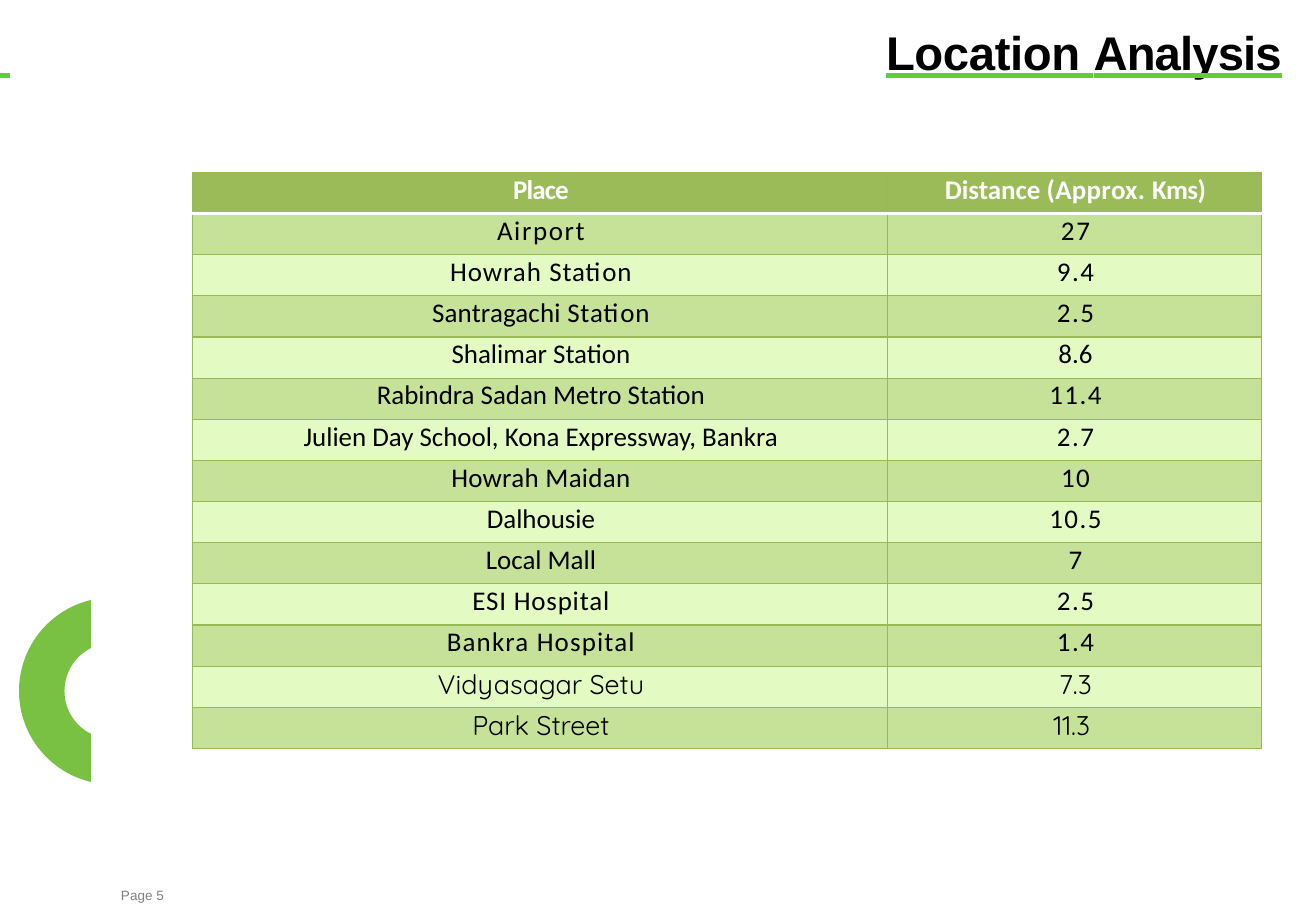
import math
from lxml import etree
from pptx import Presentation
from pptx.dml.color import RGBColor
from pptx.enum.text import MSO_ANCHOR, MSO_AUTO_SIZE, MSO_UNDERLINE, PP_ALIGN
from pptx.oxml.ns import qn
from pptx.util import Pt

LEFT, MID = PP_ALIGN.LEFT, PP_ALIGN.CENTER
TOP = MSO_ANCHOR.TOP
FIXED = MSO_AUTO_SIZE.NONE
HEAVY = MSO_UNDERLINE.HEAVY_LINE
UNIT = 914400 / 121.5

# Content: text and letter spacing in points
TITLE = [(" \t", 1.1), ("Location", -0.2), (" ", 0.1), ("Analysis", -0.5)]
FOOT = [("Page 5", 0)]
HEAD = [[("Place", -0.5)], [("Distance ", 0), ("(Approx. ", 0.2), ("Kms)", -0.3)]]
PLACES = [
    ([("Airport", 1)], "27", 1),
    ([("Howrah ", 0.6), ("Station", 0.5)], "9.4", 0.9),
    ([("Santragachi ", 0.1), ("Station", 0.5)], "2.5", 0.9),
    ([("Shalimar Station", 0)], "8.6", 0),
    ([("Rabindra Sadan Metro Station", 0)], "11.4", 0.9),
    ([("Julien Day School, Kona Expressway, Bankra", 0)], "2.7", 0.9),
    ([("Howrah Maidan", 0.2)], "10", 0.9),
    ([("Dalhousie", 0)], "10.5", 0.9),
    ([("Local Mall", 0)], "7", 0.9),
    ([("ESI Hospital", 0.5)], "2.5", 0.9),
    ([("Bankra Hospital", 0.7)], "1.4", 0.9),
    ([("Vidyasagar Setu", 0)], "7.3", 0),
    ([("Park Street", 0)], "11.3 ", 0),
]
SOFT = ("Vidyasagar Setu", "Park Street")
GREEN, EDGE, DARK, LIGHT = "9BBB59", "98B955", "C6E298", "E3FBC3"
COLS = (695, 374)


def px(n):
    return round(n * UNIT)


def hue(code):
    return RGBColor.from_string(code)


def add_fill(parent, code):
    fill = etree.SubElement(parent, qn("a:solidFill"))
    etree.SubElement(fill, qn("a:srgbClr")).set("val", code)


def write(frame, runs, size=16, font="Calibri", color="000000", bold=False,
          align=LEFT, line=None, tabs=()):
    para = frame.paragraphs[0]
    if tabs:
        stops = etree.SubElement(para._p.get_or_add_pPr(), qn("a:tabLst"))
        for stop in tabs:
            tab = etree.SubElement(stops, qn("a:tab"))
            tab.set("pos", str(px(stop)))
            tab.set("algn", "l")
    para.alignment = align
    for text, gap in runs:
        run = para.add_run()
        run.text = text
        face = run.font
        face.size, face.name, face.bold = Pt(size), font, bold
        face.color.rgb = hue(color)
        props = run._r.get_or_add_rPr()
        props.set("spc", str(round(gap * 100)))
        if line:
            face.underline = HEAVY
            mark = etree.Element(qn("a:uFill"))
            add_fill(mark, line)
            props.find(qn("a:latin")).addprevious(mark)


def place(shape, x, y, w, h, top=0):
    shape.left, shape.top, shape.width, shape.height = map(px, (x, y, w, h))
    frame = shape.text_frame
    frame.margin_left = frame.margin_right = frame.margin_bottom = 0
    frame.margin_top = px(top)
    frame.vertical_anchor, frame.auto_size = TOP, FIXED
    frame.word_wrap = True
    return frame


def style(cell, fill, edges):
    cell.margin_left = px(2)
    cell.margin_right = cell.margin_bottom = 0
    cell.margin_top = px(1)
    cell.vertical_anchor = TOP
    props = cell._tc.get_or_add_tcPr()
    for side in "LRTB":
        code, wide = edges.get(side, (EDGE, 0.75))
        line = etree.SubElement(props, qn("a:ln" + side))
        line.set("w", str(Pt(wide)))
        add_fill(line, code)
    cell.fill.solid()
    cell.fill.fore_color.rgb = hue(fill)


def add_ring(slide, x, y, outer, inner, cut):
    # Part of a ring left of a straight cut
    pts = []
    for rad, way in ((outer, 1), (inner, -1)):
        half = math.acos((x - cut) / rad)
        for i in range(-20, 21):
            turn = half * i / 20 * way
            pts.append((px(x - rad * math.cos(turn)), px(y + rad * math.sin(turn))))
    form = slide.shapes.build_freeform(*pts[0], scale=1.0)
    form.add_line_segments(pts[1:], close=True)
    ring = form.convert_to_shape()
    ring.shadow.inherit = False
    ring.fill.solid()
    ring.fill.fore_color.rgb = hue("79C142")
    ring.line.fill.background()


def add_grid(slide):
    count = len(PLACES) + 1
    grid = slide.shapes.add_table(count, 2, px(192.5), px(172.5),
                                  px(sum(COLS)), px(576)).table
    for col, wide in zip(grid.columns, COLS):
        col.width = px(wide)
    for row in grid.rows:
        row.height = px(576 / count)
    rule = ("FFFFFF", 2)
    for c, runs in enumerate(HEAD):
        cell = grid.cell(0, c)
        style(cell, GREEN, {"B": rule})
        write(cell.text_frame, runs, color="FFFFFF", bold=True, align=MID)
    for r, (name, far, gap) in enumerate(PLACES, 1):
        font = "Quicksand" if name[0][0] in SOFT else "Calibri"
        for c, runs in enumerate((name, [(far, gap)])):
            cell = grid.cell(r, c)
            style(cell, DARK if r % 2 else LIGHT, {"T": rule} if r == 1 else {})
            write(cell.text_frame, runs, font=font, align=MID)


def main():
    deck = Presentation()
    deck.slide_width, deck.slide_height = px(1316), px(911)
    slide = deck.slides.add_slide(deck.slide_layouts[5])

    # Ring at the left edge
    add_ring(slide, 112.5, 691, 93.5, 48, 91)

    # Title
    frame = place(slide.shapes.title, -3, 22, 1323, 60, top=1)
    write(frame, TITLE, size=28, font="Arial", bold=True, line="5FCE38", tabs=(889,))

    # Page number
    frame = place(slide.shapes.add_textbox(0, 0, 0, 0), 121, 887, 60, 18)
    write(frame, FOOT, size=8, font="Arial", color="808080")

    # Distances
    add_grid(slide)
    deck.save("out.pptx")


if __name__ == "__main__":
    main()
